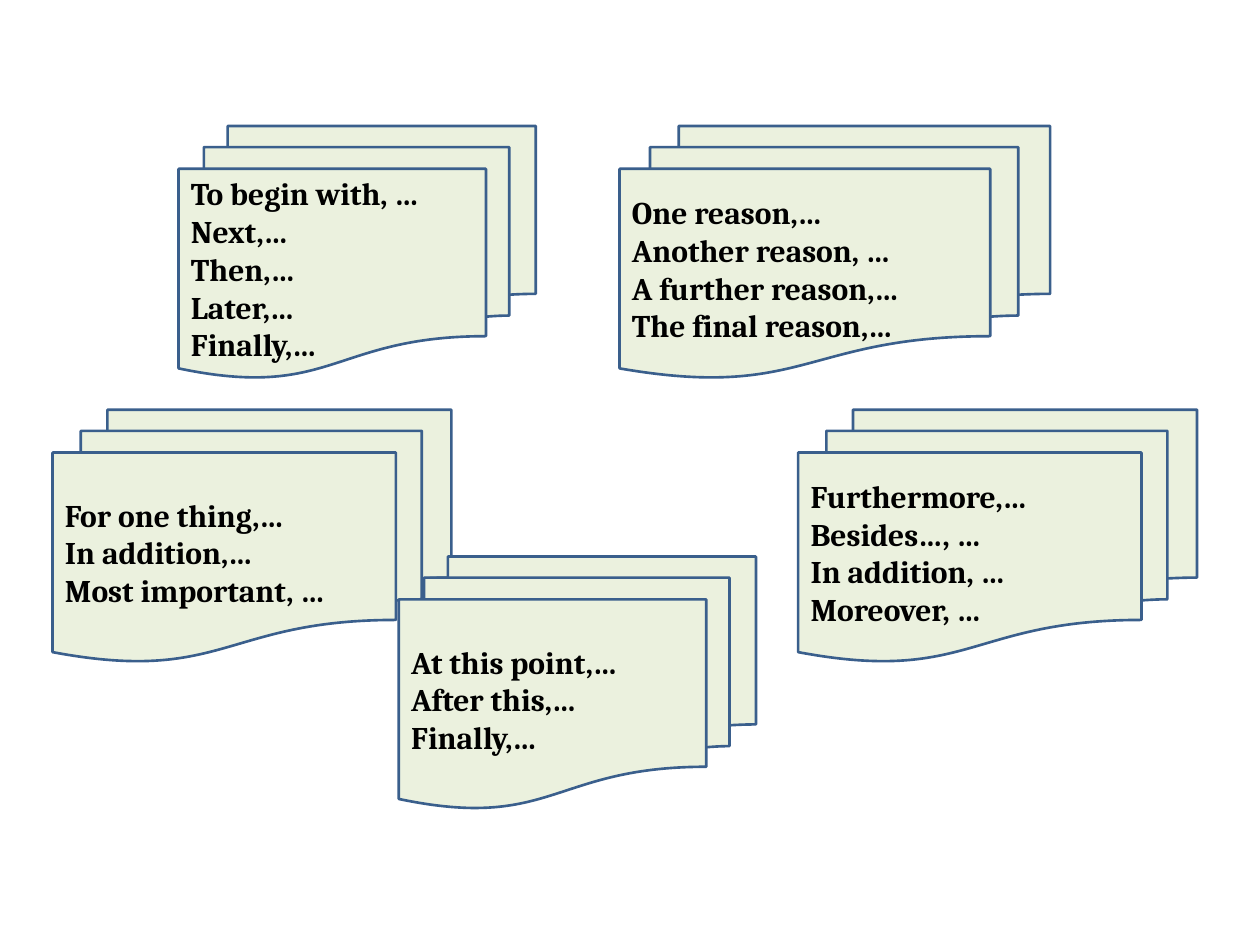
from pptx import Presentation
from pptx.dml.color import RGBColor
from pptx.enum.shapes import MSO_SHAPE
from pptx.enum.text import MSO_ANCHOR, PP_ALIGN
from pptx.util import Cm, Pt

STACK = MSO_SHAPE.FLOWCHART_MULTIDOCUMENT
MIDDLE = MSO_ANCHOR.MIDDLE
LEFT = PP_ALIGN.LEFT


def paint(target, color):
    target.rgb = RGBColor.from_string(color)


deck = Presentation()
deck.slide_width, deck.slide_height = Cm(25.4), Cm(19.05)
slide = deck.slides.add_slide(deck.slide_layouts[6])

# Card stacks, back to front: left, top, width (cm) and phrases
HIGH = 5.08
cards = [
    (3.6, 2.54, 7.2, ["To begin with, …", "Next,…", "Then,…", "Later,…", "Finally,…"]),
    (1.06, 8.26, 8.04, ["For one thing,…", "In addition,…", "Most important, …"]),
    (8.04, 11.22, 7.2, ["At this point,…", "After this,…", "Finally,…"]),
    (12.49, 2.54, 8.68, ["One reason,…", "Another reason, …", "A further reason,…",
                         "The final reason,…"]),
    (16.09, 8.26, 8.04, ["Furthermore,…", "Besides…, …", "In addition, …", "Moreover, …"]),
]

for left, top, width, lines in cards:
    card = slide.shapes.add_shape(STACK, Cm(left), Cm(top), Cm(width), Cm(HIGH))
    card.shadow.inherit = False
    card.fill.solid()
    paint(card.fill.fore_color, "EBF1DE")
    paint(card.line.color, "3A5F8C")
    card.line.width = Pt(1.5)

    # Phrases on the front sheet
    frame = card.text_frame
    frame.word_wrap = True
    frame.vertical_anchor = MIDDLE
    frame.text = "\n".join(lines)
    for para in frame.paragraphs:
        para.alignment = LEFT
        for run in para.runs:
            run.font.name = "Cambria"
            run.font.size = Pt(18)
            run.font.bold = True
            paint(run.font.color, "000000")

deck.save("out.pptx")
